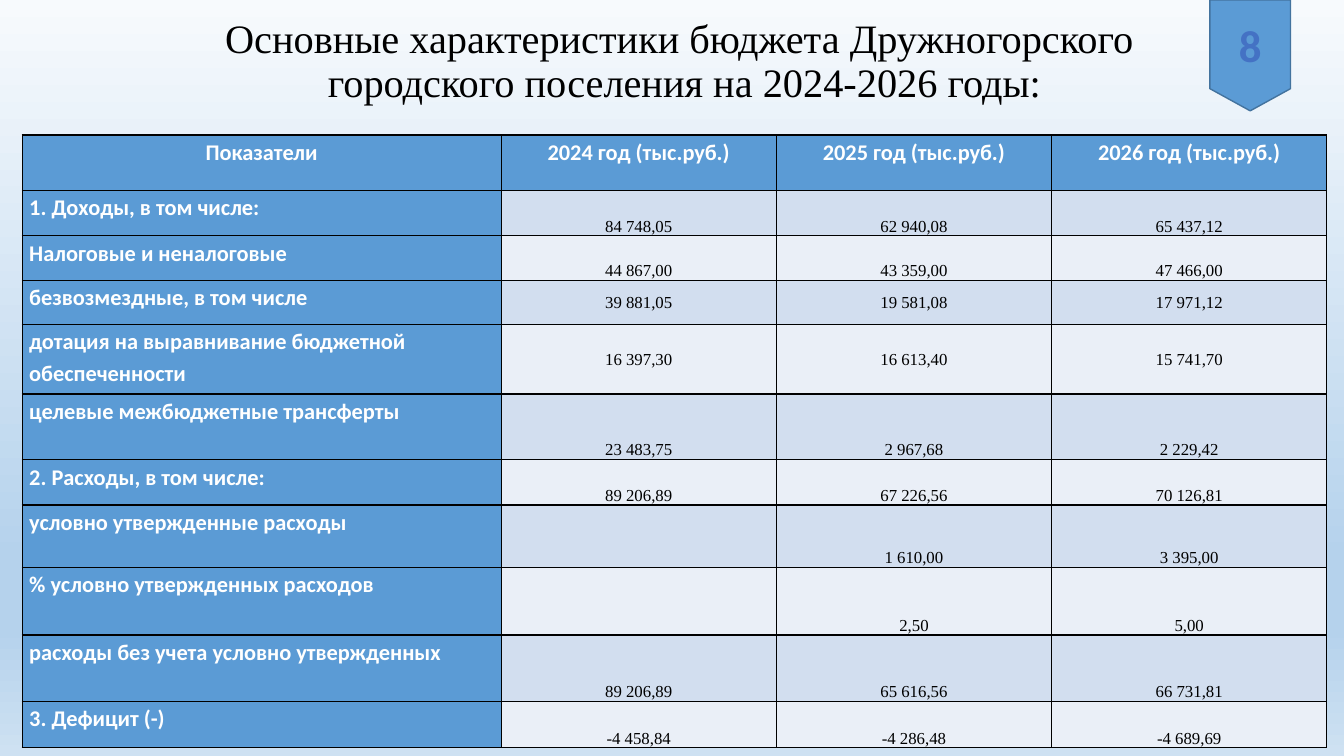
from dataclasses import dataclass

import pptx
import pptx.dml.color
import pptx.enum.shapes
import pptx.enum.text
import pptx.oxml
import pptx.oxml.ns
import pptx.util
from lxml import etree

RGBColor = pptx.dml.color.RGBColor
Align = pptx.enum.text.PP_ALIGN
Anchor = pptx.enum.text.MSO_ANCHOR

PX = 9144  # EMU, 100 px to the inch

BLACK = RGBColor(0x00, 0x00, 0x00)
WHITE = RGBColor(0xFF, 0xFF, 0xFF)
BLUE = RGBColor(0x5B, 0x9B, 0xD5)
DARK_BLUE = RGBColor(0x43, 0x73, 0x9E)
NUMBER_BLUE = RGBColor(0x44, 0x72, 0xC4)
BAND_DARK = RGBColor(0xD2, 0xDE, 0xEF)
BAND_LIGHT = RGBColor(0xEA, 0xEF, 0xF7)
BACKGROUND_STOPS = [
    (0, RGBColor(0xF7, 0xFA, 0xFD)),
    (74, RGBColor(0xB5, 0xD2, 0xEC)),
    (83, RGBColor(0xB5, 0xD2, 0xEC)),
    (100, RGBColor(0xCE, 0xE1, 0xF2)),
]


@dataclass(frozen=True)
class TextStyle:
    font: str
    size: float
    color: RGBColor
    bold: bool = False
    line_spacing: float = 1.0
    align: Align = Align.CENTER


@dataclass(frozen=True)
class BudgetRow:
    label: str
    values: tuple[str, str, str]
    height: int
    anchor: Anchor = Anchor.BOTTOM


TITLE = TextStyle("Times New Roman", 28.8, BLACK, line_spacing=0.9)
NUMBER = TextStyle("Calibri", 32, NUMBER_BLUE, bold=True)
HEADER = TextStyle("Calibri", 16, WHITE, bold=True, line_spacing=1.15)
LABEL = TextStyle("Calibri", 16, WHITE, bold=True, line_spacing=1.15, align=Align.LEFT)
VALUE = TextStyle("Times New Roman", 12, BLACK, line_spacing=1.07)

TITLE_LINES = [
    "Основные характеристики бюджета Дружногорского ",
    "городского поселения на 2024-2026 годы:",
]
HEADINGS = ["Показатели"] + [f"{year} год (тыс.руб.)" for year in (2024, 2025, 2026)]
HEADER_HEIGHT = 55
COLUMN_WIDTHS = [475, 273, 273, 273]
BUDGET_ROWS = [
    BudgetRow("1. Доходы, в том числе:", ("84 748,05", "62 940,08", "65 437,12"), 45),
    BudgetRow("Налоговые и неналоговые", ("44 867,00", "43 359,00", "47 466,00"), 44),
    BudgetRow("безвозмездные, в том числе",
              ("39 881,05", "19 581,08", "17 971,12"), 44, Anchor.MIDDLE),
    BudgetRow("дотация на выравнивание бюджетной обеспеченности",
              ("16 397,30", "16 613,40", "15 741,70"), 69, Anchor.MIDDLE),
    BudgetRow("целевые межбюджетные трансферты", ("23 483,75", "2 967,68", "2 229,42"), 65),
    BudgetRow("2. Расходы, в том числе:", ("89 206,89", "67 226,56", "70 126,81"), 45),
    BudgetRow("условно утвержденные расходы", ("", "1 610,00", "3 395,00"), 62),
    BudgetRow("% условно утвержденных расходов", ("", "2,50", "5,00"), 67),
    BudgetRow("расходы без учета условно утвержденных",
              ("89 206,89", "65 616,56", "66 731,81"), 66),
    BudgetRow("3. Дефицит (-)", ("-4 458,84", "-4 286,48", "-4 689,69"), 46),
]


def box(left: int, top: int, width: int, height: int) -> tuple[int, int, int, int]:
    """Turn a px rectangle into EMU."""
    return left * PX, top * PX, width * PX, height * PX


def write_text(frame, lines: list[str], style: TextStyle) -> None:
    paragraph = frame.paragraphs[0]
    paragraph.alignment = style.align
    paragraph.line_spacing = style.line_spacing
    for index, line in enumerate(lines):
        if index:
            paragraph.add_line_break()
        run = paragraph.add_run()
        run.text = line
        run.font.name = style.font
        run.font.size = pptx.util.Pt(style.size)
        run.font.bold = style.bold
        run.font.color.rgb = style.color


def paint_background(slide) -> None:
    fill = slide.background.fill
    fill.gradient()
    fill.gradient_angle = 270
    stop_list = slide.element.find(".//" + pptx.oxml.ns.qn("a:gsLst"))
    for stop in list(stop_list):
        stop_list.remove(stop)
    for percent, color in BACKGROUND_STOPS:
        stop = etree.SubElement(stop_list, pptx.oxml.ns.qn("a:gs"), pos=str(percent * 1000))
        etree.SubElement(stop, pptx.oxml.ns.qn("a:srgbClr"), val=str(color))


def add_title(slide) -> None:
    title = slide.shapes.add_textbox(*box(117, 10, 1124, 100))
    frame = title.text_frame
    frame.word_wrap = True
    frame.vertical_anchor = Anchor.BOTTOM
    write_text(frame, TITLE_LINES, TITLE)


def add_page_marker(slide) -> None:
    kind = pptx.enum.shapes.MSO_SHAPE.FLOWCHART_OFFPAGE_CONNECTOR
    marker = slide.shapes.add_shape(kind, *box(1200, 0, 80, 110))
    marker.shadow.inherit = False
    marker.fill.solid()
    marker.fill.fore_color.rgb = BLUE
    marker.line.color.rgb = DARK_BLUE
    marker.line.width = pptx.util.Pt(1)
    marker.text_frame.vertical_anchor = Anchor.MIDDLE
    write_text(marker.text_frame, ["8"], NUMBER)


def add_borders(cell) -> None:
    properties = cell._tc.get_or_add_tcPr()
    for index, side in enumerate(("lnL", "lnR", "lnT", "lnB")):
        border = pptx.oxml.parse_xml(
            f'<a:{side} {pptx.oxml.ns.nsdecls("a")} w="12700"><a:solidFill>'
            f'<a:srgbClr val="{BLACK}"/></a:solidFill></a:{side}>'
        )
        properties.insert(index, border)


def fill_cell(cell, text: str, style: TextStyle, color: RGBColor, anchor: Anchor) -> None:
    cell.fill.solid()
    cell.fill.fore_color.rgb = color
    add_borders(cell)
    cell.margin_left = cell.margin_right = 7 * PX
    cell.margin_top = cell.margin_bottom = 0
    cell.vertical_anchor = anchor
    if text:
        write_text(cell.text_frame, [text], style)


def add_budget_table(slide) -> None:
    heights = [HEADER_HEIGHT] + [row.height for row in BUDGET_ROWS]
    frame = slide.shapes.add_table(
        len(heights), len(COLUMN_WIDTHS), *box(22, 134, sum(COLUMN_WIDTHS), sum(heights))
    )
    table = frame.table
    table.horz_banding = False
    for column, width in zip(table.columns, COLUMN_WIDTHS):
        column.width = width * PX
    for table_row, height in zip(table.rows, heights):
        table_row.height = height * PX
    for column, heading in enumerate(HEADINGS):
        fill_cell(table.cell(0, column), heading, HEADER, BLUE, Anchor.TOP)
    for index, row in enumerate(BUDGET_ROWS, start=1):
        band = BAND_DARK if index % 2 else BAND_LIGHT
        fill_cell(table.cell(index, 0), row.label, LABEL, BLUE, Anchor.TOP)
        for column, value in enumerate(row.values, start=1):
            fill_cell(table.cell(index, column), value, VALUE, band, row.anchor)


def main() -> None:
    presentation = pptx.Presentation()
    presentation.slide_width = 1333 * PX
    presentation.slide_height = 750 * PX
    slide = presentation.slides.add_slide(presentation.slide_layouts[6])
    paint_background(slide)
    add_title(slide)
    add_page_marker(slide)
    add_budget_table(slide)
    presentation.save("out.pptx")


if __name__ == "__main__":
    main()
